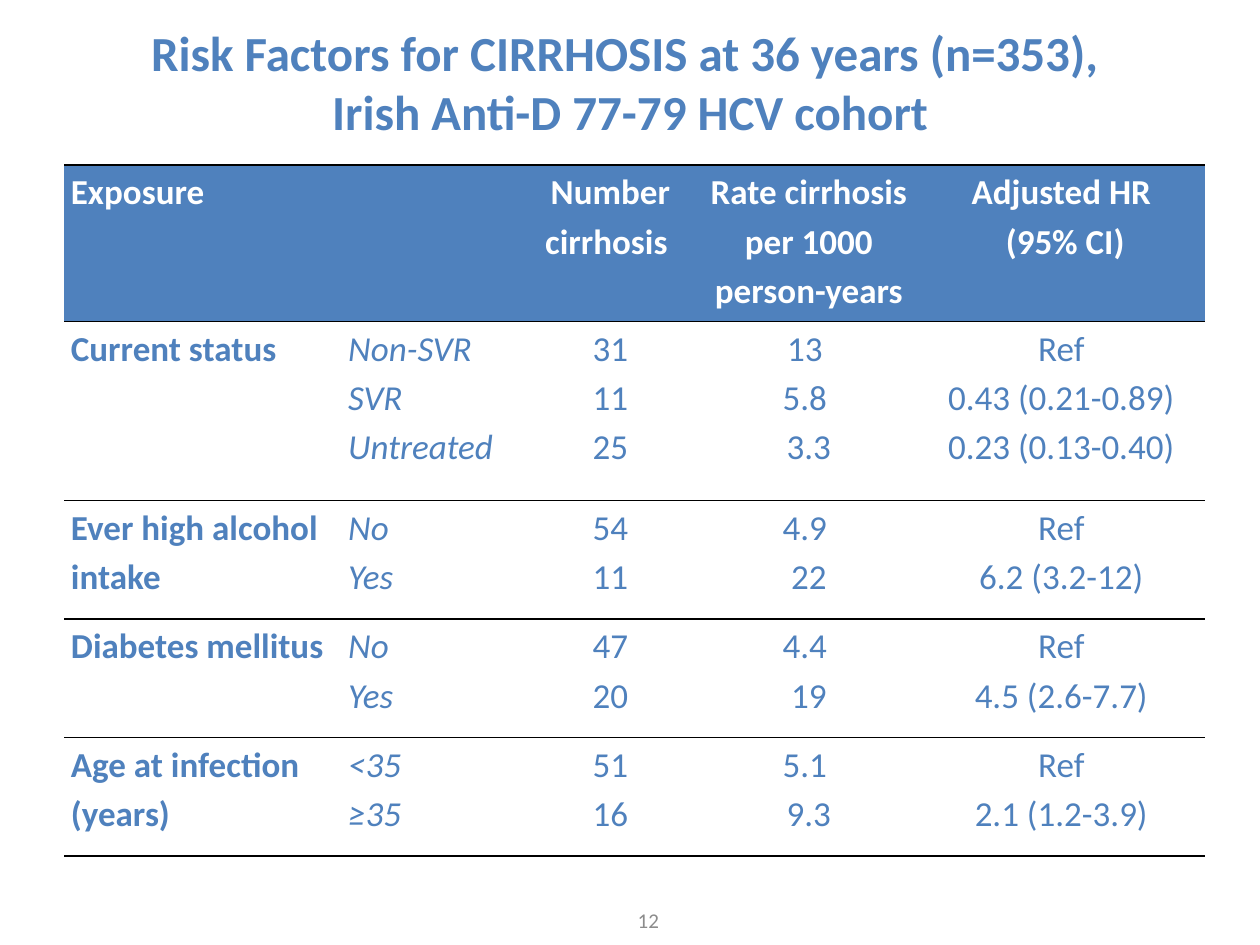
import pptx
import pptx.dml.color
import pptx.enum.text
import pptx.oxml
import pptx.oxml.ns
import pptx.util
from pptx.util import Cm

BLUE, WHITE, BLACK, GREY = "4F81BD", "FFFFFF", "000000", "8C8C8C"
NO_GRID_STYLE = "{2D5ABB26-0587-4C30-8999-92F81FD0307C}"
CENTER = pptx.enum.text.PP_ALIGN.CENTER
LEFT = pptx.enum.text.PP_ALIGN.LEFT
MIDDLE = pptx.enum.text.MSO_ANCHOR.MIDDLE

COLUMN_WIDTHS = [5.59, 3.61, 3.61, 4.39, 5.79]
ROW_HEIGHTS = [3.15, 3.61, 2.39, 2.39, 2.39]

# Each cell is a list of its paragraphs
ROWS = [
    [["Exposure"], [], ["Number cirrhosis "],
     ["Rate cirrhosis per 1000 person-years"], ["Adjusted HR", " (95% CI)"]],
    [["Current status"], ["Non-SVR", "SVR", "Untreated"], ["31", "11", "25"],
     ["13 ", "5.8 ", "3.3"], ["Ref", "0.43 (0.21-0.89)", "0.23 (0.13-0.40)"]],
    [["Ever high alcohol intake"], ["No", "Yes"], ["54", "11"],
     ["4.9 ", "22"], ["Ref", "6.2 (3.2-12)"]],
    [["Diabetes mellitus"], ["No", "Yes"], ["47", "20"],
     ["4.4 ", "19"], ["Ref", "4.5 (2.6-7.7)"]],
    [["Age at infection", "(years)"], ["<35", "≥35"], ["51", "16"],
     ["5.1 ", "9.3"], ["Ref", "2.1 (1.2-3.9)"]],
]


def rgb(value):
    return pptx.dml.color.RGBColor.from_string(value)


class SlideBuilder:
    """Holds the style and the current slide."""

    font_name = "Calibri"

    def __init__(self, slide):
        self.slide = slide

    def format_run(self, run, size, color, bold=False, italic=False):
        values = {"name": self.font_name, "size": pptx.util.Pt(size),
                  "bold": bold, "italic": italic}
        for name, value in values.items():
            setattr(run.font, name, value)
        run.font.color.rgb = rgb(color)

    def fill_text(self, text_frame, lines, alignment, line_spacing=None, **style):
        for index, line in enumerate(lines):
            paragraph = text_frame.add_paragraph() if index else text_frame.paragraphs[0]
            paragraph.alignment = alignment
            paragraph.line_spacing = line_spacing
            run = paragraph.add_run()
            run.text = line
            self.format_run(run, **style)

    def place(self, shape, left, top, width, height):
        box = {"left": left, "top": top, "width": width, "height": height}
        for name, value in box.items():
            setattr(shape, name, Cm(value))

    def title(self, lines, *box):
        title = self.slide.shapes.title
        self.place(title, *box)
        title.text_frame.auto_size = pptx.enum.text.MSO_AUTO_SIZE.NONE
        title.text_frame.vertical_anchor = MIDDLE
        paragraph = title.text_frame.paragraphs[0]
        paragraph.alignment = CENTER
        for index, line in enumerate(lines):
            if index:
                paragraph.add_line_break()
            run = paragraph.add_run()
            run.text = line
            self.format_run(run, 28, BLUE, bold=True)

    def text_box(self, text, *box):
        text_frame = self.slide.shapes.add_textbox(*map(Cm, box)).text_frame
        text_frame.word_wrap = True
        text_frame.vertical_anchor = MIDDLE
        self.fill_text(text_frame, [text], CENTER, size=12, color=GREY)

    def cell_borders(self, cell):
        properties = cell._tc.get_or_add_tcPr()
        for position, tag in enumerate(("lnT", "lnB")):
            properties.insert(position, pptx.oxml.parse_xml(
                f'<a:{tag} {pptx.oxml.ns.nsdecls("a")} w="12700"><a:solidFill>'
                f'<a:srgbClr val="{BLACK}"/></a:solidFill></a:{tag}>'))

    def table(self, rows, left, top):
        frame = self.slide.shapes.add_table(
            len(rows), len(COLUMN_WIDTHS), Cm(left), Cm(top),
            Cm(sum(COLUMN_WIDTHS)), Cm(sum(ROW_HEIGHTS)))
        table = frame.table
        table.first_row = table.horz_banding = False
        table._tbl.tblPr.find(pptx.oxml.ns.qn("a:tableStyleId")).text = NO_GRID_STYLE
        for column, width in zip(table.columns, COLUMN_WIDTHS):
            column.width = Cm(width)
        for row, height in zip(table.rows, ROW_HEIGHTS):
            row.height = Cm(height)
        margins = {"margin_left": Cm(0.13), "margin_right": Cm(0.13),
                   "margin_top": 0, "margin_bottom": 0}
        for row_index, row in enumerate(rows):
            header = row_index == 0
            for column_index, lines in enumerate(row):
                cell = table.cell(row_index, column_index)
                for name, value in margins.items():
                    setattr(cell, name, value)
                if header:
                    cell.fill.solid()
                    cell.fill.fore_color.rgb = rgb(BLUE)
                else:
                    cell.fill.background()
                self.cell_borders(cell)
                self.fill_text(cell.text_frame, lines,
                               LEFT if column_index < 2 else CENTER, 1.15,
                               size=20, color=WHITE if header else BLUE,
                               bold=header or column_index == 0,
                               italic=column_index == 1)
        table.cell(0, 0).merge(table.cell(0, 1))


def main():
    presentation = pptx.Presentation()
    presentation.slide_width, presentation.slide_height = Cm(25.4), Cm(19.05)
    title_only = presentation.slide_layouts[5]
    builder = SlideBuilder(presentation.slides.add_slide(title_only))

    # Title
    builder.title(["Risk Factors for CIRRHOSIS at 36 years (n=353), ",
                   "Irish Anti-D 77-79 HCV cohort"], 0.1, 0.53, 25.2, 2.21)
    # Risk factor table
    builder.table(ROWS, 1.3, 3.33)
    # Page number
    builder.text_box("12", 10.11, 18.03, 5.92, 1.02)

    presentation.save("out.pptx")


if __name__ == "__main__":
    main()
